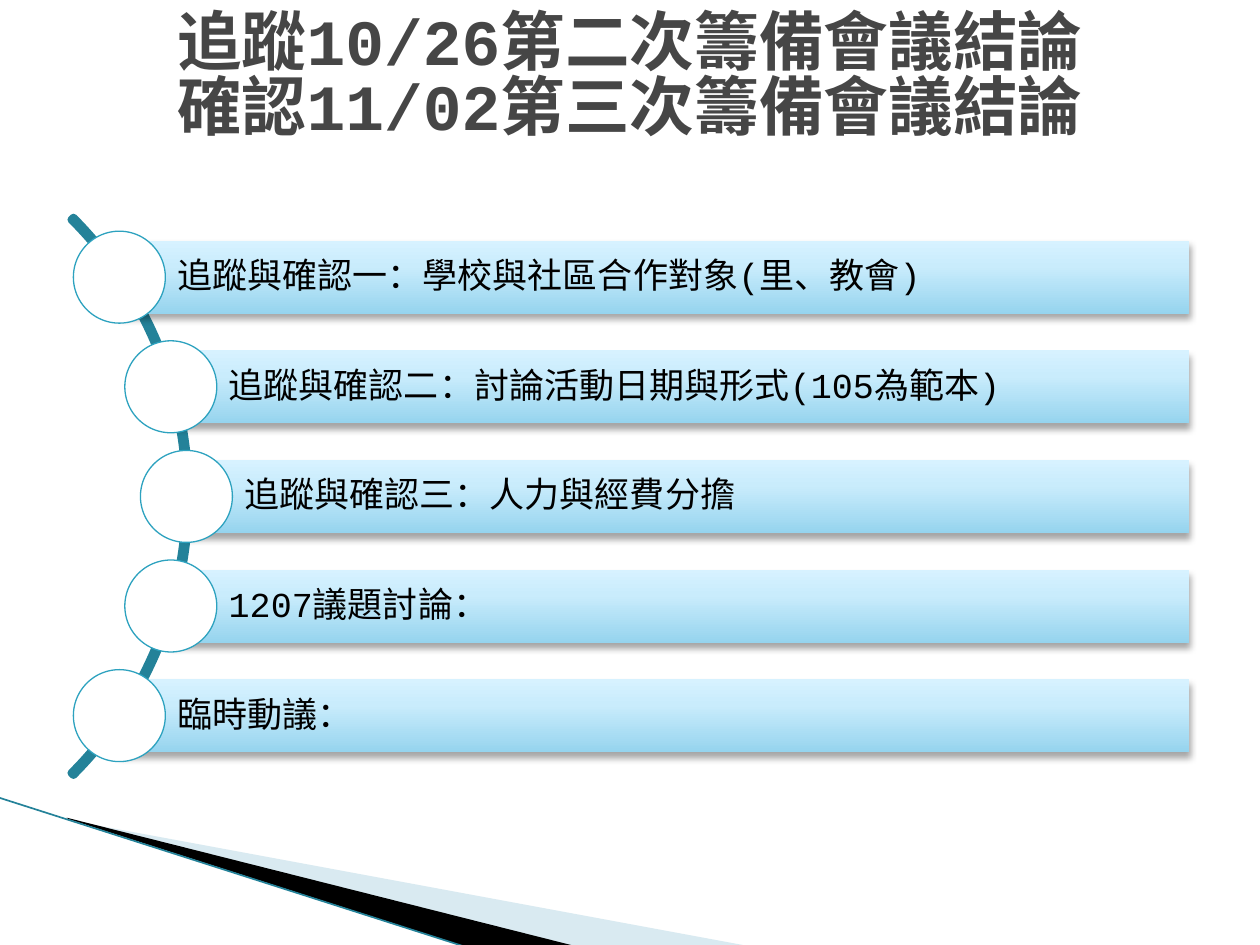
from copy import deepcopy
from dataclasses import dataclass
from math import sqrt

from lxml.etree import SubElement
from pptx import Presentation
from pptx.dml.color import RGBColor as RGB
from pptx.enum.shapes import MSO_CONNECTOR as Connector, MSO_SHAPE as Shape
from pptx.enum.text import MSO_ANCHOR as Anchor, PP_ALIGN as Align
from pptx.oxml.ns import qn
from pptx.util import Inches, Pt


@dataclass(frozen=True)
class Theme:
    latin: str = "Courier New"
    east_asian: str = "Noto Sans CJK TC"
    title_size: float = 36.9
    item_size: float = 20
    title: str = "464646"
    ink: str = "000000"
    paper: str = "FFFFFF"
    arc: str = "248299"
    ring: str = "2DA2BF"
    wedge: str = "A0CBDC"
    bar: tuple = ((0, "96D4EE"), (0.65, "C9ECFC"), (1, "D7F2FF"))


THEME = Theme()
WIDTH, HEIGHT = 10, 7.5

# Agenda grid: rows spaced evenly around the middle of the arc
ARC_X, ARC_Y, ARC_RADIUS = -1.63, 3.94, 3.13
MARKER_RADIUS = 3.11
ROW_PITCH, BAR_HEIGHT, MARKER_SIZE = 0.87, 0.58, 0.73
BAR_RIGHT = 9.44

TITLE = "追蹤10/26第二次籌備會議結論\v確認11/02第三次籌備會議結論"
AGENDA = [
    "追蹤與確認一：學校與社區合作對象(里、教會)",
    "追蹤與確認二：討論活動日期與形式(105為範本)",
    "追蹤與確認三：人力與經費分擔",
    "1207議題討論：",
    "臨時動議：",
]


def box(*lengths):
    return [Inches(length) for length in lengths]


def style_text(paragraph, size, color, bold=False):
    font = paragraph.font
    font.name, font.size, font.bold = THEME.latin, Pt(size), bold
    font.color.rgb = RGB.from_string(color)
    properties = paragraph._p.pPr.find(qn("a:defRPr"))
    SubElement(properties, qn("a:ea"), typeface=THEME.east_asian)


def set_insets(frame, left, top, right, bottom):
    frame.margin_left, frame.margin_top, frame.margin_right, frame.margin_bottom = box(
        left, top, right, bottom)


def fill_solid(shape, color, alpha=None):
    shape.fill.solid()
    shape.fill.fore_color.rgb = RGB.from_string(color)
    if alpha is not None:
        tint = shape._element.spPr.find(qn("a:solidFill"))[0]
        SubElement(tint, qn("a:alpha"), val=str(alpha * 1000))


def fill_gradient(shape, stops):
    shape.fill.gradient()
    shape.fill.gradient_angle = 90
    stop_list = shape._element.spPr.find(qn("a:gradFill")).find(qn("a:gsLst"))
    stop_list.insert(1, deepcopy(stop_list[0]))
    for stop, (position, color) in zip(shape.fill.gradient_stops, stops):
        stop.position = position
        stop.color.rgb = RGB.from_string(color)


def outline(shape, color, width):
    shape.line.color.rgb = RGB.from_string(color)
    shape.line.width = Pt(width)


def drop_shadow(shape):
    shape.shadow.inherit = False
    effects = shape._element.spPr.find(qn("a:effectLst"))
    shadow = SubElement(effects, qn("a:outerShdw"), blurRad=str(Pt(4)),
                        dist=str(Pt(3)), dir="5400000", rotWithShape="0")
    black = SubElement(shadow, qn("a:srgbClr"), val=THEME.ink)
    SubElement(black, qn("a:alpha"), val="35000")


def add_wedge(slide, points, color, alpha=None):
    start, *rest = [tuple(box(*point)) for point in points]
    builder = slide.shapes.build_freeform(*start)
    builder.add_line_segments(rest, close=True)
    wedge = builder.convert_to_shape()
    wedge.shadow.inherit = False
    wedge.line.fill.background()
    fill_solid(wedge, color, alpha)


def add_corner(slide):
    add_wedge(slide, [(0.55, 6.51), (5.95, 7.51), (4.56, 7.51), (0.55, 6.5)],
              THEME.wedge, 40)
    add_wedge(slide, [(0.53, 6.49), (4.57, 7.51), (3.72, 7.52), (0.54, 6.5)],
              THEME.ink)
    edge = slide.shapes.add_connector(Connector.STRAIGHT, *box(-0.01, 6.33, 3.71, 7.52))
    outline(edge, THEME.arc, 0.95)
    SubElement(edge._element.spPr, qn("a:effectLst"))


def add_arc(slide):
    arc = slide.shapes.add_shape(Shape.BLOCK_ARC, *box(
        ARC_X - ARC_RADIUS, ARC_Y - ARC_RADIUS, 2 * ARC_RADIUS, 2 * ARC_RADIUS))
    # Angles run from 315 to 45 degrees, and the band is almost without thickness
    for index, value in enumerate((189, 27, 0.004)):
        arc.adjustments[index] = value
    arc.shadow.inherit = False
    arc.fill.background()
    outline(arc, THEME.arc, 4.33)


def add_item(slide, text, offset):
    center_x = ARC_X + sqrt(MARKER_RADIUS ** 2 - offset ** 2)
    center_y = ARC_Y + offset

    # Bar with its text
    bar = slide.shapes.add_shape(Shape.RECTANGLE, *box(
        center_x, center_y - BAR_HEIGHT / 2, BAR_RIGHT - center_x, BAR_HEIGHT))
    fill_gradient(bar, THEME.bar)
    bar.line.fill.background()
    drop_shadow(bar)
    frame = bar.text_frame
    frame.word_wrap, frame.vertical_anchor = True, Anchor.MIDDLE
    set_insets(frame, 0.46, 0.06, 0.06, 0.06)
    paragraph = frame.paragraphs[0]
    paragraph.text = text
    paragraph.alignment, paragraph.line_spacing = Align.LEFT, 0.9
    style_text(paragraph, THEME.item_size, THEME.ink)

    # Round marker on the arc
    marker = slide.shapes.add_shape(Shape.OVAL, *box(
        center_x - MARKER_SIZE / 2, center_y - MARKER_SIZE / 2, MARKER_SIZE, MARKER_SIZE))
    marker.shadow.inherit = False
    fill_solid(marker, THEME.paper)
    outline(marker, THEME.ring, 0.75)


def set_title(slide):
    title = slide.shapes.title
    title.left, title.top, title.width, title.height = box(
        0.05 * WIDTH, 0.04 * HEIGHT, 0.9 * WIDTH, 1.25)
    frame = title.text_frame
    frame.word_wrap, frame.vertical_anchor = True, Anchor.MIDDLE
    set_insets(frame, 0.1, 0.05, 0.1, 0.65)
    paragraph = frame.paragraphs[0]
    paragraph.text = TITLE
    paragraph.alignment, paragraph.line_spacing = Align.CENTER, 0.83
    style_text(paragraph, THEME.title_size, THEME.title, bold=True)


def main():
    deck = Presentation()
    deck.slide_width, deck.slide_height = box(WIDTH, HEIGHT)
    slide = deck.slides.add_slide(deck.slide_layouts[5])
    add_corner(slide)
    add_arc(slide)
    middle = (len(AGENDA) - 1) / 2
    for row, text in enumerate(AGENDA):
        add_item(slide, text, (row - middle) * ROW_PITCH)
    set_title(slide)
    deck.save("out.pptx")


if __name__ == "__main__":
    main()
